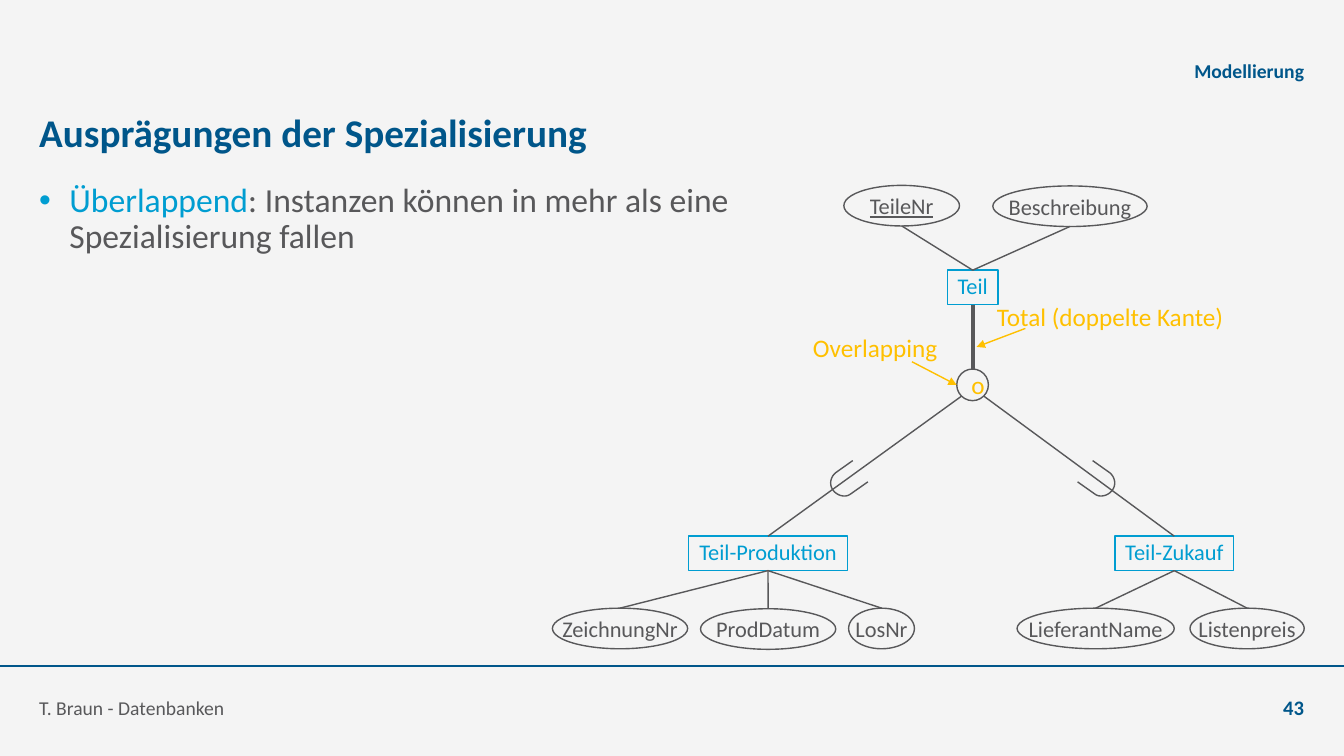
import lxml.etree
import pptx
import pptx.dml.color
import pptx.enum.shapes
import pptx.enum.text
import pptx.oxml
import pptx.oxml.ns
import pptx.util

Pt = pptx.util.Pt
RGBColor = pptx.dml.color.RGBColor
Shape = pptx.enum.shapes.MSO_SHAPE
Align = pptx.enum.text.PP_ALIGN
Anchor = pptx.enum.text.MSO_ANCHOR
qn = pptx.oxml.ns.qn

FONT = "Calibri"
PAPER = RGBColor(0xF4, 0xF4, 0xF4)
NAVY = RGBColor(0x00, 0x56, 0x8A)
CYAN = RGBColor(0x00, 0x9D, 0xD1)
GREY = RGBColor(0x58, 0x58, 0x5A)
AMBER = RGBColor(0xFF, 0xC0, 0x00)

AXIS = 694.8  # horizontal centre of the supertype
ENTITY_HEIGHT = 24.6
ATTRIBUTE_HEIGHT = 29


def place(box, left, top, width, height):
    box.left, box.top, box.width, box.height = Pt(left), Pt(top), Pt(width), Pt(height)


def set_frame(box, anchor=Anchor.TOP, margins=(7.2, 3.6), wrap=True):
    frame = box.text_frame
    frame.auto_size = pptx.enum.text.MSO_AUTO_SIZE.NONE
    frame.word_wrap = wrap
    frame.vertical_anchor = anchor
    frame.margin_left = frame.margin_right = Pt(margins[0])
    frame.margin_top = frame.margin_bottom = Pt(margins[1])
    return frame.paragraphs[0]


def add_span(para, text, size, color, bold=False, underline=False):
    span = para.add_run()
    span.text = text
    span.font.name = FONT
    span.font.size = Pt(size)
    span.font.color.rgb = color
    span.font.bold = bold
    span.font.underline = underline


def add_label(page, text, left, top, width, height, size, color, bold=False,
              align=Align.LEFT, **frame):
    box = page.shapes.add_textbox(Pt(left), Pt(top), Pt(width), Pt(height))
    para = set_frame(box, **frame)
    para.alignment = align
    add_span(para, text, size, color, bold)


def add_node(page, kind, left, top, width, height, color, fill=PAPER):
    node = page.shapes.add_shape(kind, Pt(left), Pt(top), Pt(width), Pt(height))
    node.shadow.inherit = False
    if fill is None:
        node.fill.background()
    else:
        node.fill.solid()
        node.fill.fore_color.rgb = fill
    node.line.color.rgb = color
    node.line.width = Pt(1)
    return node


def add_line(page, start, end, color=GREY, width=1, arrow=False):
    line = page.shapes.add_connector(
        pptx.enum.shapes.MSO_CONNECTOR.STRAIGHT,
        Pt(start[0]), Pt(start[1]), Pt(end[0]), Pt(end[1]))
    line.line.color.rgb = color
    line.line.width = Pt(width)
    if arrow:
        lxml.etree.SubElement(line.line._get_or_add_ln(), qn("a:tailEnd"), type="triangle")
    lxml.etree.SubElement(line._element.spPr, qn("a:effectLst"))


def add_entity(page, text, center, top, width):
    node = add_node(page, Shape.RECTANGLE, center - width / 2, top, width,
                    ENTITY_HEIGHT, CYAN)
    para = set_frame(node, wrap=False)
    para.alignment = Align.CENTER
    para.line_spacing = 0.9
    add_span(para, text, 16, CYAN)


def add_attribute(page, text, left, top, width, entity_point, key=False):
    node = add_node(page, Shape.OVAL, left, top, width, ATTRIBUTE_HEIGHT, GREY)
    para = set_frame(node, Anchor.MIDDLE, wrap=False)
    para.alignment = Align.CENTER
    add_span(para, text, 16, GREY, underline=key)
    edge = top if top > entity_point[1] else top + ATTRIBUTE_HEIGHT
    add_line(page, entity_point, (left + width / 2, edge))


def curve(p0, p1, p2, p3, steps=12):
    """Points on a cubic curve, without its start."""
    points = []
    for step in range(1, steps + 1):
        t = step / steps
        weights = ((1 - t) ** 3, 3 * t * (1 - t) ** 2, 3 * t * t * (1 - t), t ** 3)
        points.append(tuple(sum(w * p[i] for w, p in zip(weights, (p0, p1, p2, p3)))
                            for i in (0, 1)))
    return points


def add_subset_sign(page, mirrored):
    outer, bend, middle, inner = (619.9, 344.2), (607.7, 352.8), (595.4, 350.6), (596.9, 337.7)
    points = [outer, bend]
    points += curve(bend, (604.1, 355.7), (598.3, 354.2), middle)
    points += curve(middle, (591.8, 346.3), (593.3, 340.6), inner)
    points.append((609.1, 329))
    if mirrored:
        points = [(2 * AXIS - x, y) for x, y in points]
    points = [(Pt(x), Pt(y)) for x, y in points]
    builder = page.shapes.build_freeform(*points[0], scale=1.0)
    builder.add_line_segments(points[1:], close=False)
    sign = builder.convert_to_shape()
    sign.shadow.inherit = False
    sign.fill.background()
    sign.line.color.rgb = GREY
    sign.line.width = Pt(1)


def add_text_parts(page):
    # Title
    title = page.shapes.title
    place(title, 28, 71.3, 903.6, 45.4)
    para = set_frame(title, Anchor.MIDDLE, (0, 0))
    para.alignment = Align.LEFT
    add_span(para, "Ausprägungen der Spezialisierung", 28, NAVY, bold=True)

    # Bullet list
    body = page.placeholders[1]
    place(body, 28, 131, 543.6, 334)
    para = set_frame(body, margins=(0, 0))
    properties = para._p.get_or_add_pPr()
    properties.set("marL", str(Pt(21.6)))
    properties.set("indent", str(Pt(-21.6)))
    lxml.etree.SubElement(properties, qn("a:buChar"), char="•")
    para.line_spacing = 0.9
    para.space_before = Pt(0)
    add_span(para, "Überlappend", 24, CYAN)
    add_span(para, ": Instanzen können in mehr als eine Spezialisierung fallen", 24, GREY)

    # Header and footer
    rule = add_node(page, Shape.RECTANGLE, 0, 475, 960, 1.4, NAVY, NAVY)
    rule.line.fill.background()
    edge = {"anchor": Anchor.BOTTOM, "margins": (0, 0)}
    add_label(page, "Modellierung", 283, 31, 648.6, 28, 14, NAVY, True, Align.RIGHT, **edge)
    add_label(page, "T. Braun - Datenbanken", 28, 486, 662, 28, 14, GREY, **edge)
    add_label(page, "43", 874.8, 486, 56.8, 28, 14.7, NAVY, True, Align.RIGHT, **edge)


def add_diagram(page):
    # Entities: text, centre, top, width, attribute side, attributes
    entities = [
        ("Teil", AXIS, 193, 36, 193,
         [("TeileNr", 602.8, 132.4, 82.6), ("Beschreibung", 709.2, 132.8, 110.2)]),
        ("Teil-Produktion", 548.6, 383, 113.8, 407.6,
         [("ZeichnungNr", 394.6, 434.4, 96.6), ("ProdDatum", 500.4, 434.8, 96.6),
          ("LosNr", 606.2, 434.4, 47)]),
        ("Teil-Zukauf", 838.8, 383, 85, 407.6,
         [("LieferantName", 726.5, 434.4, 112.3), ("Listenpreis", 850, 434.4, 81.6)]),
    ]
    for text, center, top, width, side, attributes in entities:
        add_entity(page, text, center, top, width)
        for name, left, attribute_top, attribute_width in attributes:
            add_attribute(page, name, left, attribute_top, attribute_width,
                          (center, side), key=name == "TeileNr")

    # Specialisation circle and its edges
    add_line(page, (AXIS, 217.6), (AXIS, 263.6), width=3)
    circle = add_node(page, Shape.OVAL, 683.4, 263.6, 22.6, 22.6, GREY, fill=None)
    para = set_frame(circle, Anchor.MIDDLE)
    para.alignment = Align.CENTER
    add_span(para, "o", 18, AMBER)
    add_line(page, (548.6, 383), (686.8, 283))
    add_line(page, (702.8, 283), (838.8, 383))
    for mirrored in (False, True):
        add_subset_sign(page, mirrored)

    # Annotations
    add_label(page, "Total (doppelte Kante)", 705, 212, 178.6, 29, 18, AMBER, wrap=False)
    add_line(page, (732.4, 234.6), (697.6, 247.8), AMBER, arrow=True)
    add_label(page, "Overlapping", 573.6, 233.8, 104.4, 29, 18, AMBER, wrap=False)
    add_line(page, (651.4, 258.4), (683.4, 275), AMBER, arrow=True)


def main():
    deck = pptx.Presentation()
    deck.slide_width, deck.slide_height = Pt(960), Pt(540)
    page = deck.slides.add_slide(deck.slide_layouts[1])
    page.background.fill.solid()
    page.background.fill.fore_color.rgb = PAPER
    add_text_parts(page)
    add_diagram(page)
    deck.save("out.pptx")


if __name__ == "__main__":
    main()
